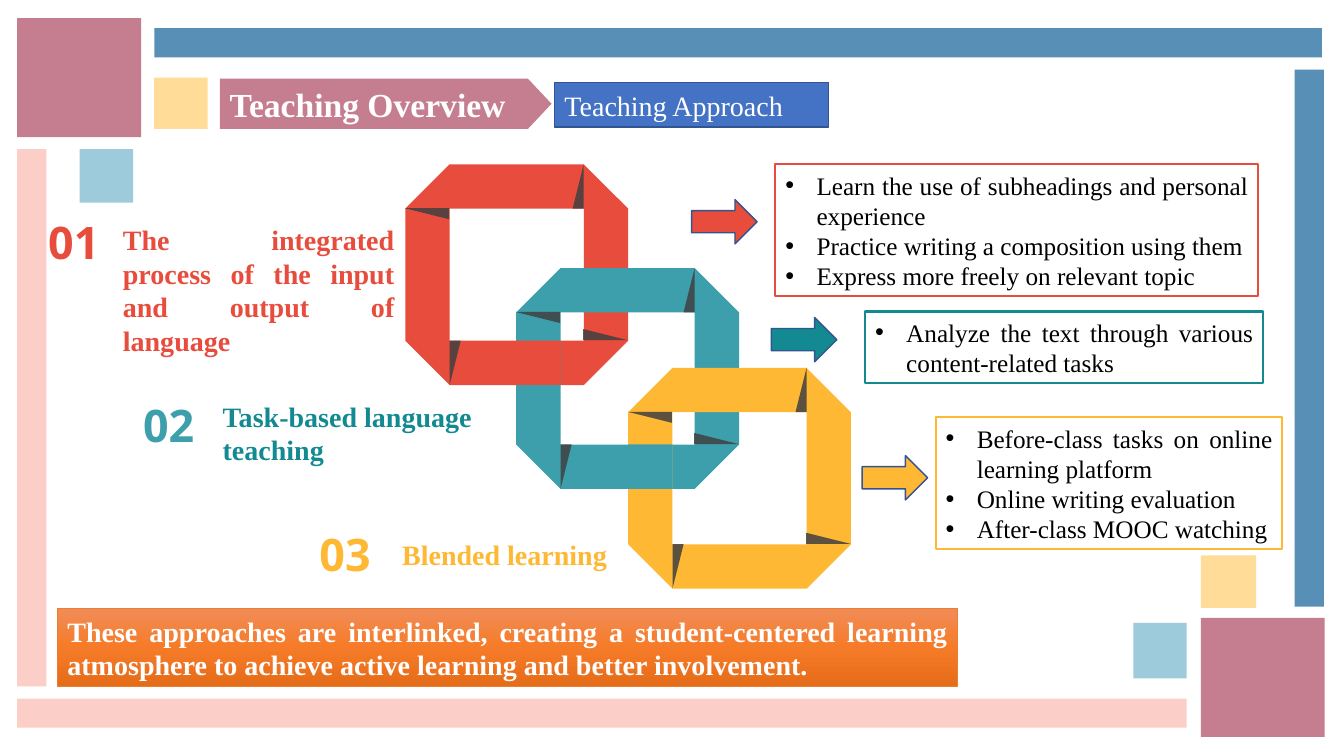
from lxml.etree import SubElement
from pptx import Presentation
from pptx.dml.color import RGBColor
from pptx.enum.shapes import MSO_SHAPE as Preset
from pptx.enum.text import MSO_ANCHOR as Anchor, MSO_AUTO_SIZE as AutoSize, PP_ALIGN as Align
from pptx.oxml import parse_xml
from pptx.oxml.ns import nsdecls, qn
from pptx.util import Inches, Pt

COLORS = {
    "mauve": "C57E90", "pink": "FBCEC8", "steel": "578FB7", "sky": "9DCBDB",
    "cream": "FFDC97", "blue": "4472C4", "navy": "325491", "red": "E74C3C",
    "aqua": "3D9FAC", "teal": "138A91", "gold": "FEB834", "shade": "404040",
    "orange": "ED7D31", "white": "FFFFFF", "black": "000000",
}
BANNER_STOPS = [(0, "F18C57"), (50, "F67B28"), (100, "E56C19")]
SERIF, SANS = "Times New Roman", "Open Sans"

RING_WIDTH, RING_HEIGHT, BAND = 2.21, 2.19, 0.44
RINGS = [(4.02, 1.63, "red"), (5.12, 2.66, "aqua"), (6.23, 3.65, "gold")]
# offset from the ring's corner, rotation, flip
FOLDS = [(1.66, 0, 0, "flipH"), (1.93, 1.47, 90, "flipH"),
         (0.16, 0.27, 270, "flipH"), (0.44, 1.75, 0, "flipV")]

FRAME = [
    (0.17, 0.18, 1.23, 1.18, "mauve"), (11.91, 6.13, 1.23, 1.18, "mauve"),
    (0.17, 1.48, 0.29, 5.33, "pink"), (0.17, 6.93, 11.6, 0.29, "pink"),
    (12.84, 0.69, 0.29, 5.33, "steel"), (1.53, 0.28, 11.58, 0.29, "steel"),
    (0.79, 1.48, 0.53, 0.53, "sky"), (11.91, 5.51, 0.55, 0.52, "cream"),
    (1.53, 0.77, 0.53, 0.51, "cream"), (11.24, 6.18, 0.53, 0.55, "sky"),
]
# label box, label text, label colour, justified, number, number place, number colour
LABELS = [
    ((1.12, 2.16, 2.89, 1.11), "The integrated process of the input and output of language",
     "red", True, "01", (0.38, 2.08), "red"),
    ((2.11, 3.91, 2.9, 0.77), "Task-based language teaching",
     "teal", False, "02", (1.32, 3.9), "aqua"),
    ((3.89, 5.28, 2.54, 0.44), "Blended learning",
     "gold", True, "03", (3.07, 5.18), "gold"),
]
# arrow place, panel box, colour, bullet points
PANELS = [
    ((6.86, 1.98), (7.69, 1.63, 4.79, 1.31), "red",
     ["Learn the use of subheadings and personal experience",
      "Practice writing a composition using them",
      "Express more freely on relevant topic"]),
    ((7.65, 3.15), (8.58, 3.09, 3.95, 0.71), "teal",
     ["Analyze the text through various content-related tasks"]),
    ((8.55, 4.52), (9.28, 4.14, 3.44, 1.31), "gold",
     ["Before-class tasks on online learning platform",
      "Online writing evaluation",
      "After-class MOOC watching"]),
]


def rgb(name):
    return RGBColor.from_string(COLORS[name])


class SlideMaker:
    def __init__(self, page):
        self.page = page

    def paint(self, shape, fill=None, line=None, width=1):
        shape.shadow.inherit = False
        if fill:
            shape.fill.solid()
            shape.fill.fore_color.rgb = rgb(fill)
        else:
            shape.fill.background()
        if line:
            shape.line.color.rgb = rgb(line)
            shape.line.width = Pt(width)
        else:
            shape.line.fill.background()
        return shape

    def shape(self, preset, box, fill=None, line=None, width=1):
        shape = self.page.shapes.add_shape(preset, *map(Inches, box))
        return self.paint(shape, fill, line, width)

    def fill_text(self, shape, lines, size, color, bold=False, font=SERIF,
                  align=Align.LEFT, anchor=Anchor.MIDDLE, wrap=True, bullets=False, spaced=False):
        frame = shape.text_frame
        frame.word_wrap = wrap
        frame.auto_size = AutoSize.SHAPE_TO_FIT_TEXT
        frame.vertical_anchor = anchor
        for index, text in enumerate(lines):
            para = frame.add_paragraph() if index else frame.paragraphs[0]
            para.alignment = align
            if spaced:
                para.space_before, para.space_after = Pt(1.9), Pt(0.9)
            if bullets:
                self.add_bullet(para)
            span = para.add_run()
            span.text = text
            span.font.name, span.font.size, span.font.bold = font, Pt(size), bold
            span.font.color.rgb = rgb(color)

    def add_bullet(self, para):
        props = para._p.get_or_add_pPr()
        indent = Inches(0.31)
        props.set("marL", str(indent))
        props.set("indent", str(-indent))
        SubElement(props, qn("a:buFont")).set("typeface", "Arial")
        SubElement(props, qn("a:buChar")).set("char", "•")

    def text(self, box, text, size, color, **style):
        area = self.page.shapes.add_textbox(*map(Inches, box))
        self.fill_text(area, [text], size, color, bold=True, anchor=Anchor.TOP, **style)

    def ring(self, left, top, color):
        """Draw an octagonal band with a rectangular opening."""
        right, bottom = left + RING_WIDTH, top + RING_HEIGHT
        inner_left, inner_right = left + BAND, right - BAND
        inner_top, inner_bottom = top + BAND, bottom - BAND
        outline = [(inner_left, top), (inner_right, top), (right, inner_top),
                   (right, inner_bottom), (inner_right, bottom), (inner_left, bottom),
                   (left, inner_bottom), (left, inner_top)]
        opening = [(inner_left, inner_top), (inner_left, inner_bottom),
                   (inner_right, inner_bottom), (inner_right, inner_top)]
        outline, opening = ([(Inches(x), Inches(y)) for x, y in points]
                            for points in (outline, opening))
        builder = self.page.shapes.build_freeform(*outline[0])
        builder.add_line_segments(outline[1:], close=True)
        builder.move_to(*opening[0])
        builder.add_line_segments(opening[1:], close=True)
        self.paint(builder.convert_to_shape(), color)

    def fold(self, left, top, rotation, flip):
        """Draw the translucent shadow triangle at a ring's corner."""
        triangle = self.shape(Preset.RIGHT_TRIANGLE, (left, top, 0.11, BAND), "shade")
        triangle.rotation = rotation
        props = triangle._element.spPr
        props.find(qn("a:xfrm")).set(flip, "1")
        tint = props.find(qn("a:solidFill")).find(qn("a:srgbClr"))
        SubElement(tint, qn("a:alpha")).set("val", "85000")

    def gradient(self, shape, stops):
        marks = "".join(f'<a:gs pos="{place * 1000}"><a:srgbClr val="{color}"/></a:gs>'
                        for place, color in stops)
        props = shape._element.spPr
        solid = props.find(qn("a:solidFill"))
        props.replace(solid, parse_xml(
            f'<a:gradFill {nsdecls("a")} rotWithShape="1"><a:gsLst>{marks}</a:gsLst>'
            '<a:lin ang="5400000" scaled="0"/></a:gradFill>'))


def main():
    deck = Presentation()
    deck.slide_width, deck.slide_height = Inches(13.33), Inches(7.5)
    maker = SlideMaker(deck.slides.add_slide(deck.slide_layouts[6]))

    for *box, color in FRAME:
        maker.shape(Preset.RECTANGLE, box, color)

    title = maker.shape(Preset.PENTAGON, (2.18, 0.78, 3.29, 0.5), "mauve")
    title.adjustments[0] = 0.47
    maker.fill_text(title, ["Teaching Overview"], 24, "white", bold=True)
    topic = maker.shape(Preset.RECTANGLE, (5.5, 0.82, 2.72, 0.44), "blue", "navy")
    maker.fill_text(topic, ["Teaching Approach"], 20, "white")

    for ring in RINGS:
        maker.ring(*ring)
    # The earlier ring passes over the next one at the lower crossing
    for (_, top, color), (next_left, _, _) in zip(RINGS, RINGS[1:]):
        crossing = (next_left, top + RING_HEIGHT - BAND, BAND, BAND)
        maker.shape(Preset.RECTANGLE, crossing, color)
    for left, top, _ in RINGS:
        for across, down, rotation, flip in FOLDS:
            maker.fold(left + across, top + down, rotation, flip)

    for box, text, color, justified, number, place, number_color in LABELS:
        maker.text(box, text, 20, color, spaced=justified,
                   align=Align.JUSTIFY if justified else Align.LEFT)
        maker.text((*place, 0.71, 0.64), number, 32, number_color, font=SANS, wrap=False)

    for place, box, color, points in PANELS:
        maker.shape(Preset.RIGHT_ARROW, (*place, 0.65, 0.44), color, "navy")
        panel = maker.shape(Preset.RECTANGLE, box, line=color, width=1.5)
        maker.fill_text(panel, points, 18, "black", align=Align.JUSTIFY, bullets=True)

    banner = maker.shape(Preset.RECTANGLE, (0.57, 6.04, 8.93, 0.77), "orange", "orange", 0.5)
    maker.gradient(banner, BANNER_STOPS)
    maker.fill_text(banner, ["These approaches are interlinked, creating a student-centered learning "
                             "atmosphere to achieve active learning and better involvement."],
                    20, "white", bold=True, align=Align.JUSTIFY)

    deck.save("out.pptx")


if __name__ == "__main__":
    main()
